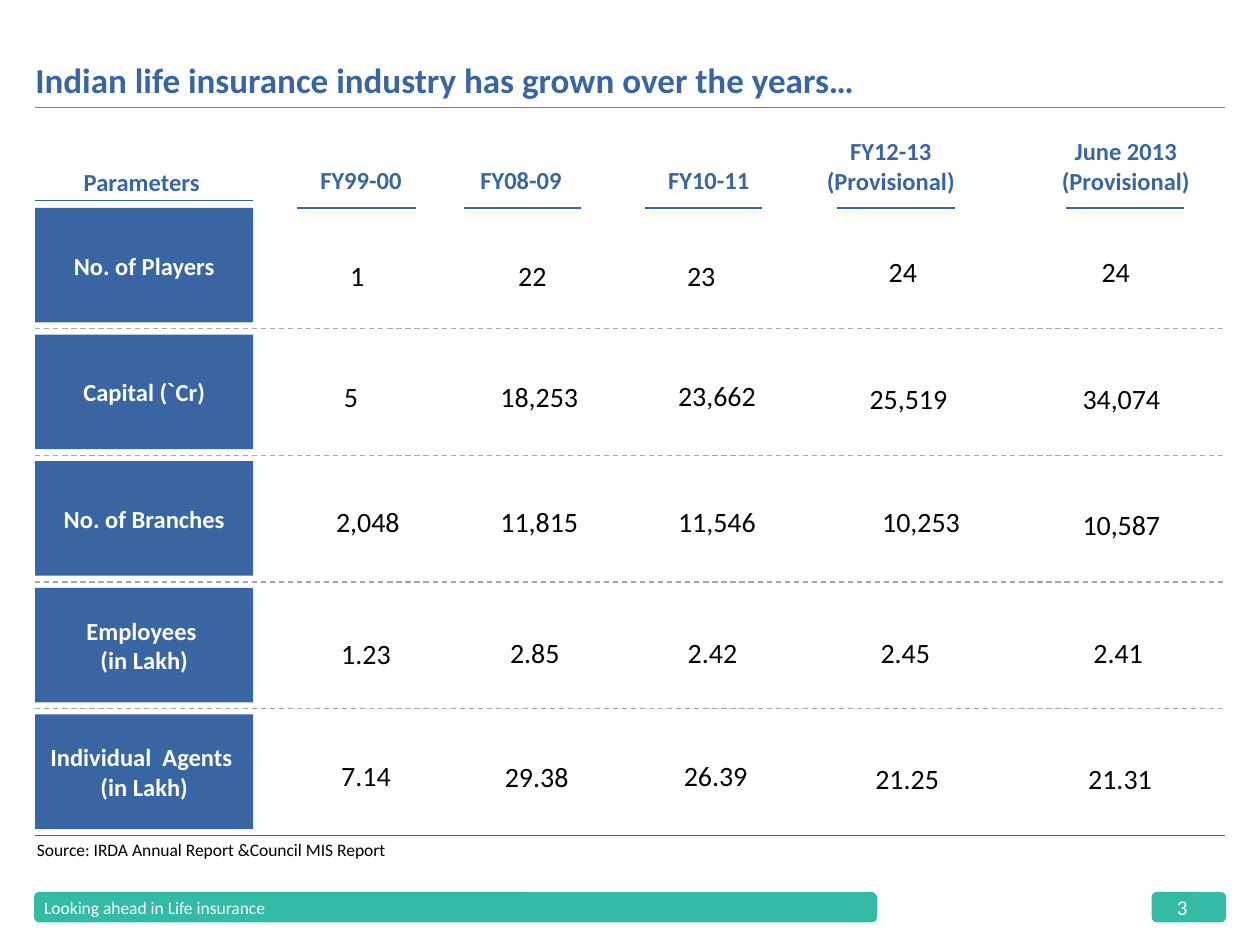
from lxml.etree import SubElement
from pptx import Presentation
from pptx.dml.color import RGBColor
from pptx.enum.dml import MSO_LINE
from pptx.enum.shapes import MSO_CONNECTOR, MSO_SHAPE
from pptx.enum.text import MSO_ANCHOR, MSO_AUTO_SIZE, PP_ALIGN
from pptx.oxml.ns import qn
from pptx.util import Inches, Pt

BLUE = RGBColor(0x39, 0x65, 0xA2)
TEAL = RGBColor(0x33, 0xBB, 0xA6)
GRAY = RGBColor(0x80, 0x80, 0x80)
LIGHT_GRAY = RGBColor(0xA6, 0xA6, 0xA6)
WHITE = RGBColor(0xFF, 0xFF, 0xFF)
BLACK = RGBColor(0x00, 0x00, 0x00)

LEFT, RIGHT = 0.28, 9.72
ROW_TOP, ROW_PITCH = 1.65, 1.005
LABEL_WIDTH, LABEL_HEIGHT = 1.73, 0.91

prs = Presentation()
prs.slide_width, prs.slide_height = Inches(10), Inches(7.5)
slide = prs.slides.add_slide(prs.slide_layouts[6])


def add_text(box, text, size, color, bold=False, align=PP_ALIGN.CENTER,
             anchor=MSO_ANCHOR.MIDDLE, margins=(0, 0, 0, 0), wrap=True, grow=False):
    """Box is (left, top, width, height, fill, preset); fill None gives a text box."""
    *place, fill, preset = box
    place = [Inches(value) for value in place]
    if fill is None:
        shape = slide.shapes.add_textbox(*place)
    else:
        shape = slide.shapes.add_shape(preset, *place)
        shape.shadow.inherit = False
        shape.fill.solid()
        shape.fill.fore_color.rgb = fill
        shape.line.fill.background()
    frame = shape.text_frame
    frame.word_wrap = wrap
    frame.auto_size = MSO_AUTO_SIZE.SHAPE_TO_FIT_TEXT if grow else MSO_AUTO_SIZE.NONE
    frame.vertical_anchor = anchor
    (frame.margin_left, frame.margin_top,
     frame.margin_right, frame.margin_bottom) = [Inches(m) for m in margins]
    # The rupee sign is a backtick set in its own font
    before, rupee, after = text.partition("`")
    frame.text = before
    if rupee:
        for piece in (rupee, after):
            frame.paragraphs[0].add_run().text = piece
    for paragraph in frame.paragraphs:
        paragraph.alignment = align
        for run in paragraph.runs:
            run.font.name = "Arial" if run.text == "`" else "Calibri"
            run.font.size = Pt(size)
            run.font.bold = bold
            run.font.color.rgb = color


def add_rule(x1, x2, y, color, width, dash=None):
    rule = slide.shapes.add_connector(
        MSO_CONNECTOR.STRAIGHT, Inches(x1), Inches(y), Inches(x2), Inches(y))
    rule.line.color.rgb = color
    rule.line.width = Pt(width)
    if dash:
        rule.line.dash_style = dash
    SubElement(rule._element.spPr, qn("a:effectLst"))


# Footer bar and page number
for left, width in ((0.27, 6.69), (9.14, 0.59)):
    add_text((left, 7.08, width, 0.24, TEAL, MSO_SHAPE.ROUNDED_RECTANGLE), "", 10, WHITE)
add_text((0.35, 7.1, 3.15, 0.2, None, None), "Looking ahead in Life insurance", 10, WHITE,
         align=PP_ALIGN.LEFT, wrap=False)
add_text((9.34, 7.1, 0.2, 0.2, None, None), "3", 12, WHITE,
         align=PP_ALIGN.LEFT, wrap=False)

# Title
add_text((LEFT, 0.09, 9.45, 0.71, None, None),
         "Indian life insurance industry has grown over the years…", 20, BLUE,
         bold=True, align=PP_ALIGN.LEFT, anchor=MSO_ANCHOR.BOTTOM)
add_rule(LEFT, RIGHT, 0.85, GRAY, 0.5)

# Column headings: text, left, top, width, height, rule left, rule right, rule y
headings = [
    ("Parameters", 0.28, 1.32, 1.69, 0.26, 0.28, 2.01, 1.59),
    ("FY99-00", 2.43, 1.31, 0.87, 0.25, 2.36, 3.3, 1.65),
    ("FY08-09", 3.7, 1.31, 0.87, 0.25, 3.68, 4.61, 1.65),
    ("FY10-11", 5.19, 1.31, 0.87, 0.25, 5.12, 6.05, 1.65),
    ("FY12-13 (Provisional)", 6.39, 1.08, 1.36, 0.49, 6.64, 7.58, 1.65),
    ("June 2013\n(Provisional)", 8.15, 1.08, 1.57, 0.49, 8.46, 9.4, 1.65),
]
for heading, left, top, width, height, rule_left, rule_right, rule_y in headings:
    add_text((left, top, width, height, None, None), heading, 14, BLUE, bold=True,
             anchor=MSO_ANCHOR.BOTTOM, margins=(0, 0, 0, 0.02), grow=True)
    add_rule(rule_left, rule_right, rule_y, BLUE, 0.75)

# Rows: label, then (figure, left, top) for each year
rows = [
    ("No. of Players",
     [("1", 2.59, 2), ("22", 4, 2), ("23", 5.34, 2), ("24", 6.94, 1.97), ("24", 8.63, 1.97)]),
    ("Capital (`Cr)",
     [("5", 2.54, 2.96), ("18,253", 3.84, 2.96), ("23,662", 5.25, 2.95),
      ("25,519", 6.77, 2.98), ("34,074", 8.46, 2.98)]),
    ("No. of Branches",
     [("2,048", 2.54, 3.95), ("11,815", 3.84, 3.95), ("11,546", 5.25, 3.95),
      ("10,253", 6.87, 3.95), ("10,587", 8.46, 3.98)]),
    ("Employees \v(in Lakh)",
     [("1.23", 2.59, 5), ("2.85", 3.93, 4.99), ("2.42", 5.34, 4.99),
      ("2.45", 6.87, 4.99), ("2.41", 8.56, 4.99)]),
    ("Individual  Agents \v(in Lakh)",
     [("7.14", 2.59, 5.97), ("29.38", 3.88, 5.98), ("26.39", 5.3, 5.97),
      ("21.25", 6.82, 5.99), ("21.31", 8.51, 5.99)]),
]
FIGURE_WIDTHS = {1: 0.49, 2: 0.45, 4: 0.63, 5: 0.76, 6: 0.88}  # by character count

for index, (label, figures) in enumerate(rows):
    top = ROW_TOP + index * ROW_PITCH
    add_text((LEFT, top, LABEL_WIDTH, LABEL_HEIGHT, BLUE, MSO_SHAPE.RECTANGLE),
             label, 14, WHITE, bold=True, margins=(0.06, 0.06, 0.06, 0.06))
    for figure, left, figure_top in figures:
        add_text((left, figure_top, FIGURE_WIDTHS[len(figure)], 0.37, None, None),
                 figure, 16, BLACK, margins=(0.1, 0.05, 0.1, 0.05), wrap=False, grow=True)
    if index < len(rows) - 1:
        add_rule(LEFT, RIGHT, top + 0.96, LIGHT_GRAY, 0.75, MSO_LINE.DASH)

# Closing rule and source line
add_rule(LEFT, RIGHT, 6.63, BLUE, 0.25)
add_text((0.27, 6.66, 2.81, 0.17, None, None),
         "Source: IRDA Annual Report &Council MIS Report", 10, BLACK,
         anchor=MSO_ANCHOR.TOP, wrap=False, grow=True)

prs.save("out.pptx")
